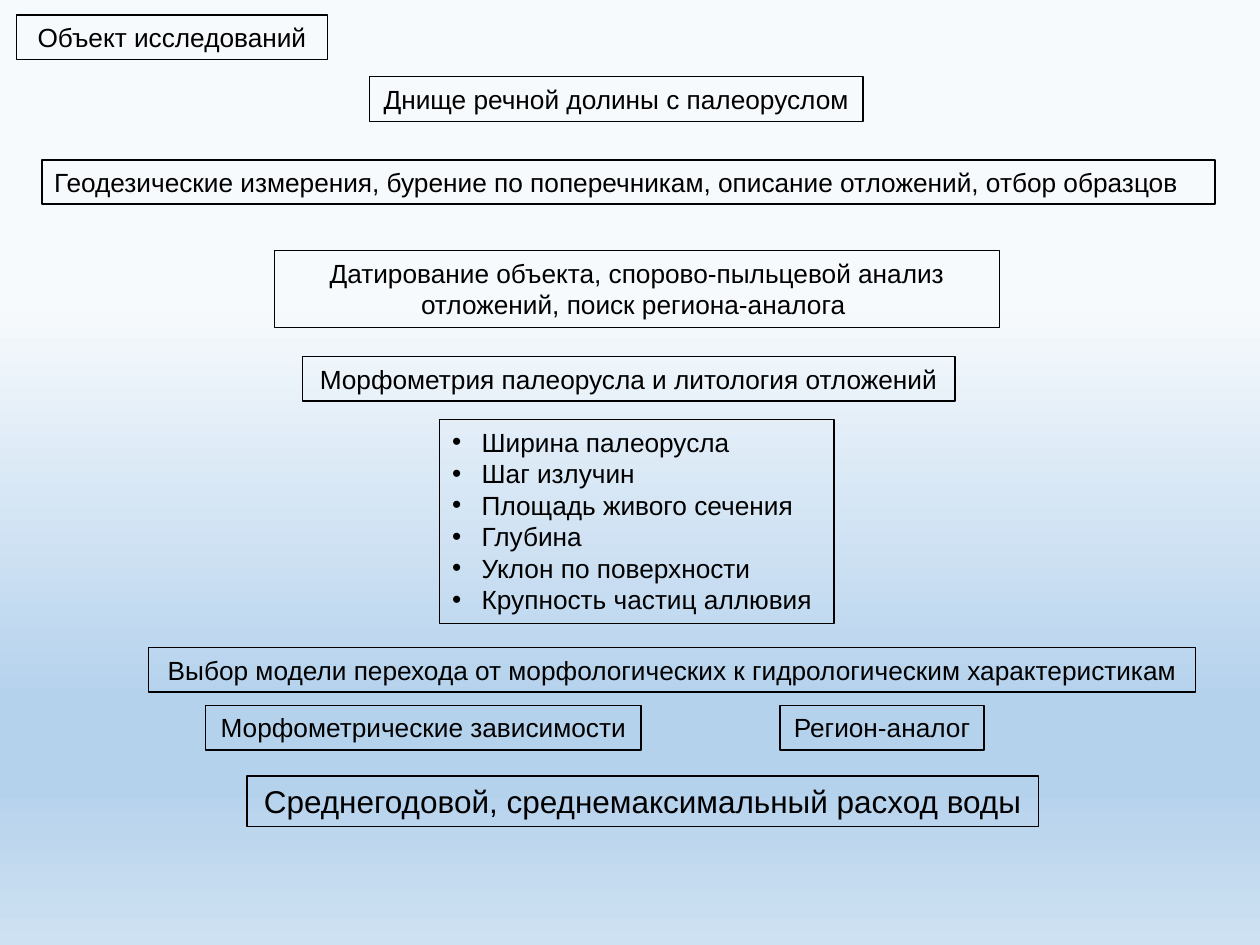
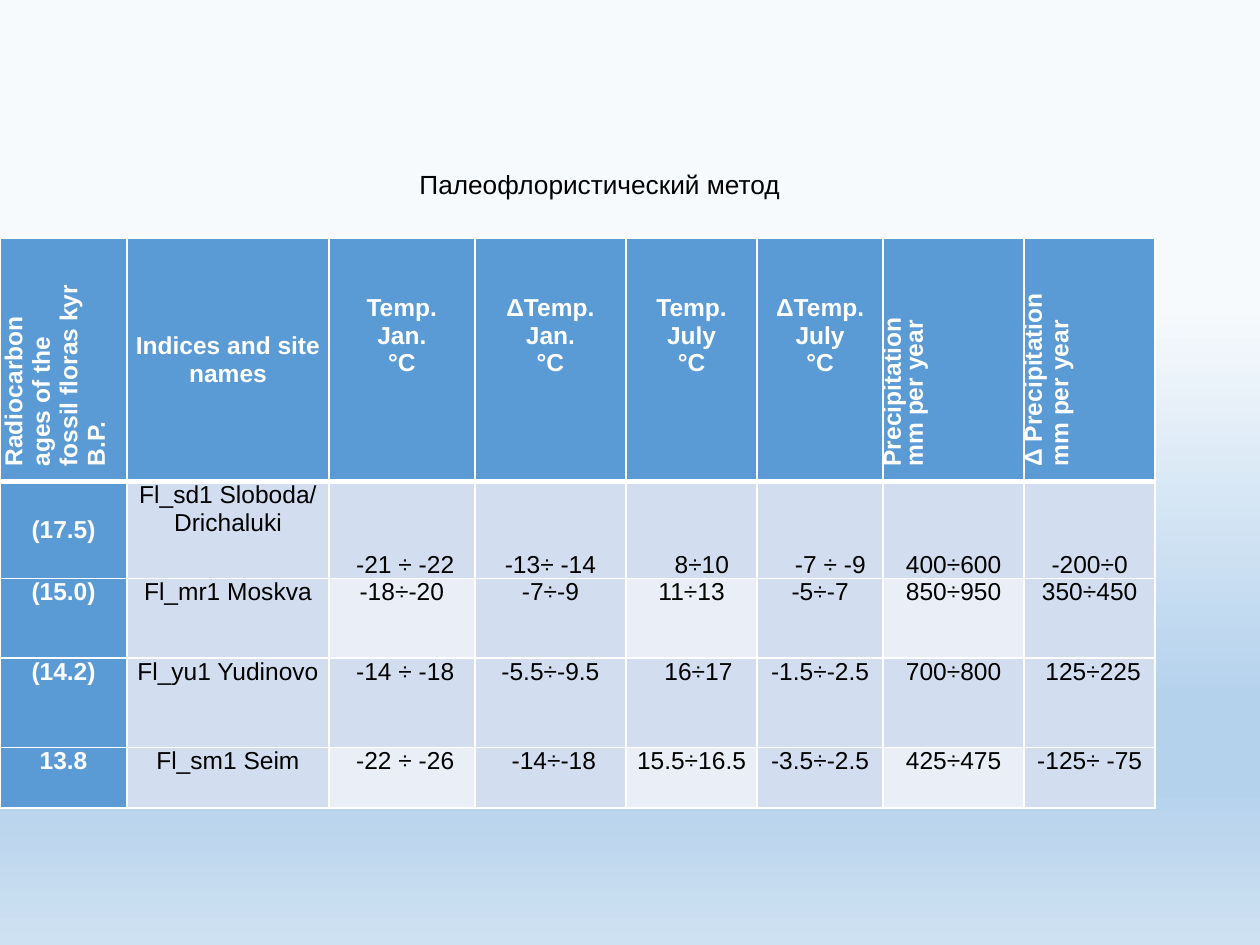
from dataclasses import dataclass

from lxml.etree import SubElement
from pptx import Presentation
from pptx.dml.color import RGBColor
from pptx.enum.shapes import MSO_SHAPE
from pptx.enum.text import MSO_ANCHOR as ANCHOR, MSO_AUTO_SIZE as AUTO, PP_ALIGN as ALIGN
from pptx.oxml.ns import qn
from pptx.util import Pt


@dataclass(frozen=True)
class Theme:
    font: str = "Arial"
    ink: str = "000000"
    white: str = "FFFFFF"
    head: str = "5B9BD5"
    band: str = "D2DEEF"
    light: str = "EAEFF7"
    sky: tuple = ((32, "F7FAFD"), (74, "B5D2EC"), (83, "B5D2EC"), (100, "CEE1F2"))
    body: float = 15
    large: float = 18
    cell: float = 14
    thin: float = 0.75
    rule: float = 1
    thick: float = 3


T = Theme()

# Scheme boxes: (left, top, width, height), lines, options
BOXES = [
    ((9.4, 8.6, 177.8, 25.4), ["Объект исследований"], {}),
    ((211, 43.9, 282.2, 25.4), ["Днище речной долины с палеоруслом"], {}),
    ((23.8, 91.4, 670.3, 25.4),
     ["Геодезические измерения, бурение по поперечникам, описание отложений, отбор образцов"],
     {"align": ALIGN.LEFT, "line": T.rule}),
    ((172.8, 203.8, 373, 25.4), ["Морфометрия палеорусла и литология отложений"], {}),
    ((251.3, 239.8, 225.4, 116.6),
     ["Ширина палеорусла", "Шаг излучин", "Площадь живого сечения",
      "Глубина", "Уклон по поверхности", "Крупность частиц аллювия"],
     {"align": ALIGN.LEFT, "bullet": True}),
    ((157, 143.3, 414, 43.9),
     ["Датирование объекта, спорово-пыльцевой анализ отложений, поиск региона-аналога "], {}),
    ((85, 370.1, 598.3, 25.4),
     ["Выбор модели перехода от морфологических к гидрологическим характеристикам"],
     {"wrap": False}),
    ((117.4, 403.2, 249.1, 25.4), ["Морфометрические зависимости"],
     {"wrap": False, "line": T.rule}),
    ((445.7, 403.2, 116.6, 25.4), ["Регион-аналог"], {"wrap": False}),
    ((141.1, 443.5, 452.2, 28.8), ["Среднегодовой, среднемаксимальный расход воды"],
     {"wrap": False, "size": T.large}),
]

# Climate table
TITLE = "Палеофлористический метод"
TITLE_AT = (232.6, 92.9, 223.2, 25.4)
TABLE_AT = (0, 136.2)
COLS = [72.7, 115.2, 83.5, 86.4, 74.9, 72, 80.6, 74.9]
ROWS = [123.1, 55.4, 45.4, 51.1, 34.6]
HEADER = [
    ["Radiocarbon", "ages of the", "fossil floras kyr B.P."],
    ["Indices and site names"],
    ["Temp.", "Jan.", "°C"],
    ["ΔTemp.", "Jan.", "°C"],
    ["Temp.", "July", "°C"],
    ["ΔTemp.", "July", "°C"],
    ["Precipitation", "mm per year"],
    ["Δ Precipitation", "mm per year"],
]
DATA = [
    ["(17.5)", "Fl_sd1 Sloboda/\nDrichaluki", "-21 ÷ -22", "-13÷ -14",
     "8÷10", "-7 ÷ -9", "400÷600", "-200÷0"],
    ["(15.0)", "Fl_mr1 Moskva", "-18÷-20", "-7÷-9",
     "11÷13", "-5÷-7", "850÷950", "350÷450"],
    ["(14.2)", "Fl_yu1 Yudinovo", "-14 ÷ -18", "-5.5÷-9.5",
     "16÷17", "-1.5÷-2.5", "700÷800", "125÷225"],
    ["13.8", "Fl_sm1 Seim", "-22 ÷ -26", "-14÷-18",
     "15.5÷16.5", "-3.5÷-2.5", "425÷475", "-125÷ -75"],
]
VERTICAL = {0, 6, 7}
TIGHT = {(6, 0), (6, 1), (7, 0)}  # header column, line
# Values set right of centre: (row, column) -> left indent
NUDGE = {(1, 2): 3.9, (1, 4): 11.7, (1, 5): 11.7, (3, 2): 3.9,
         (3, 4): 7.8, (3, 7): 3.9, (4, 2): 3.9, (4, 3): 3.9}


def rgb(color):
    return RGBColor.from_string(color)


def points(lengths):
    return [Pt(n) for n in lengths]


def write(tf, lines, size, color=T.ink, bold=False, align=ALIGN.LEFT, indent=0):
    """Fill a text frame, one paragraph a line, and return the paragraphs."""
    for i, line in enumerate(lines):
        p = tf.paragraphs[0] if i == 0 else tf.add_paragraph()
        p.alignment = align
        if indent:
            p._p.get_or_add_pPr().set("marL", str(Pt(indent)))
        r = p.add_run()
        r.text = line
        r.font.name, r.font.size, r.font.bold = T.font, Pt(size), bold
        r.font.color.rgb = rgb(color)
    return tf.paragraphs


def add_bullet(p, indent=16.9):
    pPr = p._p.get_or_add_pPr()
    pPr.set("marL", str(Pt(indent)))
    pPr.set("indent", str(-Pt(indent)))
    SubElement(pPr, qn("a:buFont"), typeface=T.font)
    SubElement(pPr, qn("a:buChar"), char="•")


def paint_background(master):
    fill = master.background.fill
    fill.gradient()
    fill.gradient_angle = 270
    stops = master.element.find(".//" + qn("a:gsLst"))
    for gs in list(stops):
        stops.remove(gs)
    for pos, color in T.sky:
        gs = SubElement(stops, qn("a:gs"), pos=str(pos * 1000))
        SubElement(gs, qn("a:srgbClr"), val=color)


def add_box(slide, at, lines, align=ALIGN.CENTER, line=T.thin, wrap=True,
            size=T.body, bullet=False):
    sp = slide.shapes.add_shape(MSO_SHAPE.RECTANGLE, *points(at))
    sp.shadow.inherit = False
    sp.fill.background()
    sp.line.color.rgb = rgb(T.ink)
    sp.line.width = Pt(line)
    tf = sp.text_frame
    tf.word_wrap, tf.auto_size = wrap, AUTO.SHAPE_TO_FIT_TEXT
    tf.vertical_anchor = ANCHOR.TOP
    for p in write(tf, lines, size, align=align):
        if bullet:
            add_bullet(p)


def style_cell(cell, row, col):
    """Margins, borders and fill of one cell."""
    cell.margin_left = cell.margin_right = Pt(2.9)
    cell.margin_top = cell.margin_bottom = 0
    tcPr = cell._tc.get_or_add_tcPr()
    for side in "LRTB":
        heavy = (row, side) in {(0, "B"), (1, "T")}
        ln = SubElement(tcPr, qn("a:ln" + side), w=str(Pt(T.thick if heavy else T.rule)))
        SubElement(SubElement(ln, qn("a:solidFill")), qn("a:srgbClr"), val=T.white)
    if row == 0 or col == 0:
        color = T.head
    else:
        color = T.light if row % 2 == 0 and col % 2 == 0 else T.band
    cell.fill.solid()
    cell.fill.fore_color.rgb = rgb(color)


def fill_header(cell, col, lines):
    vertical = col in VERTICAL
    paragraphs = write(cell.text_frame, lines, T.cell, T.white, True,
                       ALIGN.LEFT if vertical else ALIGN.CENTER, 5.8 if vertical else 0)
    if vertical:
        cell._tc.get_or_add_tcPr().set("vert", "vert270")
    if vertical or col == 1:
        cell.vertical_anchor = ANCHOR.MIDDLE
    else:
        cell.margin_top = Pt(32.2)
    for i, p in enumerate(paragraphs):
        if (col, i) in TIGHT:
            p.line_spacing = 0.8


def fill_value(cell, row, col, text):
    first = col == 0
    write(cell.text_frame, text.split("\n"), T.cell, T.white if first else T.ink,
          first, ALIGN.CENTER, NUDGE.get((row, col), 0))
    if row == 1 and col != 1:
        cell.vertical_anchor = ANCHOR.MIDDLE if first else ANCHOR.BOTTOM


def add_climate_table(slide):
    frame = slide.shapes.add_table(len(ROWS), len(COLS), *points(TABLE_AT),
                                   Pt(sum(COLS)), Pt(sum(ROWS)))
    table = frame.table
    for column, width in zip(table.columns, COLS):
        column.width = Pt(width)
    for row, height in zip(table.rows, ROWS):
        row.height = Pt(height)
    for r, values in enumerate([HEADER, *DATA]):
        for c, value in enumerate(values):
            cell = table.cell(r, c)
            style_cell(cell, r, c)
            if r == 0:
                fill_header(cell, c, value)
            else:
                fill_value(cell, r, c, value)


def main():
    prs = Presentation()
    prs.slide_width, prs.slide_height = Pt(720), Pt(540)
    paint_background(prs.slide_master)
    blank = prs.slide_layouts[6]

    # Research scheme
    scheme = prs.slides.add_slide(blank)
    for at, lines, options in BOXES:
        add_box(scheme, at, lines, **options)

    # Palaeofloristic method
    method = prs.slides.add_slide(blank)
    add_climate_table(method)
    tf = method.shapes.add_textbox(*points(TITLE_AT)).text_frame
    tf.word_wrap, tf.auto_size = False, AUTO.SHAPE_TO_FIT_TEXT
    write(tf, [TITLE], T.body)

    prs.save("out.pptx")


if __name__ == "__main__":
    main()
